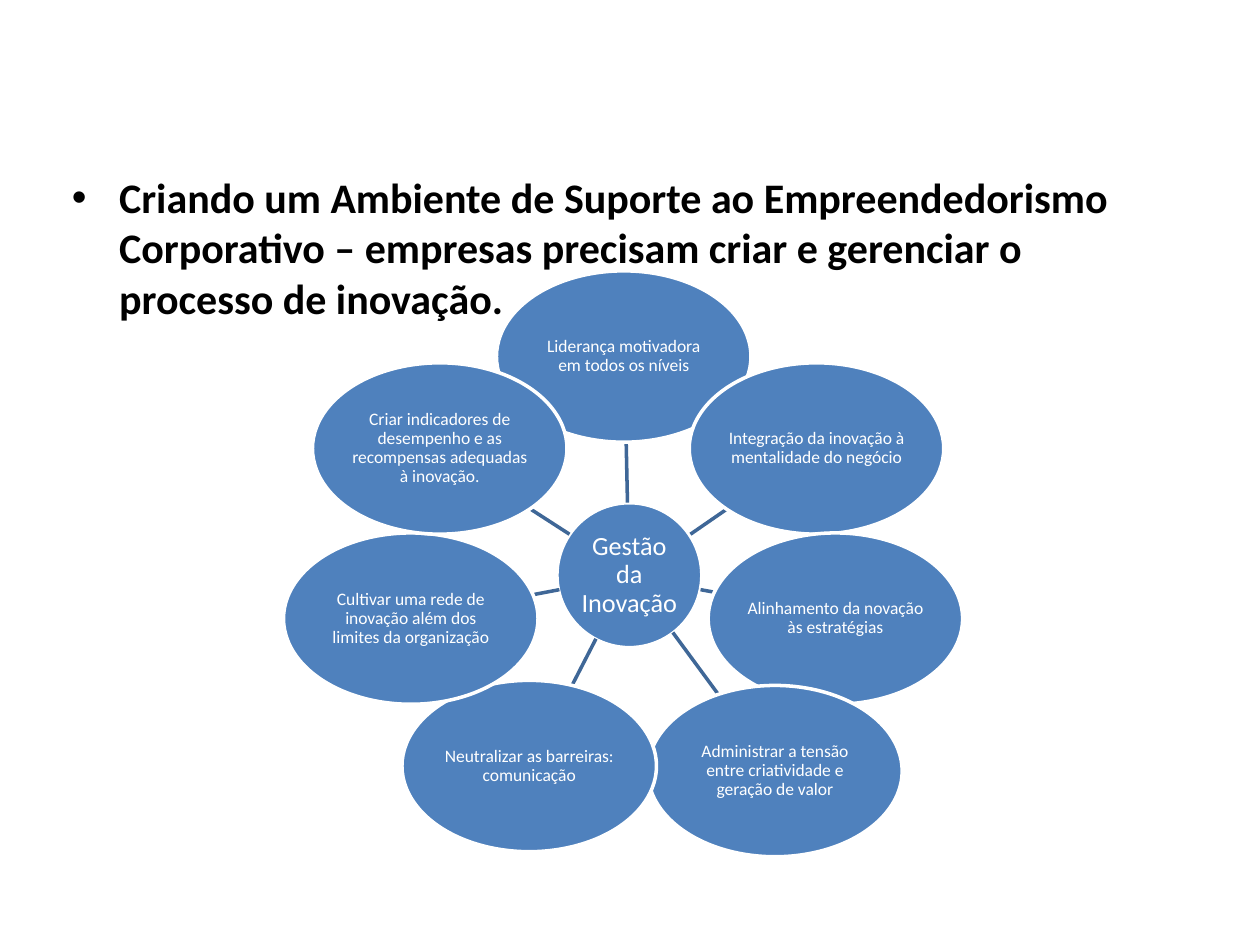
from dataclasses import dataclass

from lxml.etree import SubElement
from pptx import Presentation
from pptx.dml.color import RGBColor
from pptx.enum.shapes import MSO_CONNECTOR, MSO_SHAPE
from pptx.enum.text import MSO_ANCHOR, MSO_AUTO_SIZE, PP_ALIGN
from pptx.oxml.ns import qn
from pptx.slide import Slide
from pptx.util import Inches, Pt

BLACK = RGBColor(0x00, 0x00, 0x00)
WHITE = RGBColor(0xFF, 0xFF, 0xFF)
BLUE = RGBColor(0x4F, 0x81, 0xBD)
DARK_BLUE = RGBColor(0x3F, 0x67, 0x97)
FONT = "Calibri"
HEADING = (
    "Criando um Ambiente de Suporte ao Empreendedorismo Corporativo – "
    "empresas precisam criar e gerenciar o processo de inovação."
)


@dataclass(frozen=True)
class Bubble:
    text: str
    left: float
    top: float
    width: float = 2.02
    height: float = 1.36
    size: float = 10


@dataclass(frozen=True)
class Spoke:
    start: tuple[float, float]
    end: tuple[float, float]


HUB = Bubble("Gestão da Inovação", 4.42, 3.99, 1.15, 1.15, 15)
BRANCHES = [
    (Spoke((4.98, 3.99), (4.97, 3.51)),
     Bubble("Liderança motivadora em todos os níveis", 3.94, 2.15)),
    (Spoke((5.48, 4.24), (5.77, 4.04)),
     Bubble("Integração da inovação à mentalidade do negócio", 5.47, 2.88)),
    (Spoke((5.56, 4.68), (5.67, 4.70)),
     Bubble("Alinhamento da novação às estratégias", 5.62, 4.23)),
    (Spoke((5.34, 5.02), (5.70, 5.51)),
     Bubble("Administrar a tensão entre criatividade e geração de valor", 5.14, 5.44)),
    (Spoke((4.73, 5.07), (4.54, 5.44)),
     Bubble("Neutralizar as barreiras: comunicação", 3.19, 5.40)),
    (Spoke((4.44, 4.68), (4.23, 4.72)),
     Bubble("Cultivar uma rede de inovação além dos limites da organização", 2.25, 4.23)),
    (Spoke((4.52, 4.24), (4.21, 4.04)),
     Bubble("Criar indicadores de desempenho e as recompensas adequadas à inovação.",
            2.48, 2.88)),
]


def add_heading(page: Slide) -> None:
    title = page.shapes.title
    title.element.getparent().remove(title.element)
    body = page.placeholders[1]
    body.left, body.top = Inches(0.47), Inches(1.31)
    body.width, body.height = Inches(9), Inches(4.95)
    body.text_frame.auto_size = MSO_AUTO_SIZE.NONE
    para = body.text_frame.paragraphs[0]
    para.text = HEADING
    para.space_before = Pt(0)
    para.font.name = FONT
    para.font.size = Pt(24)
    para.font.bold = True
    para.font.color.rgb = BLACK


def add_bubble(page: Slide, bubble: Bubble) -> None:
    oval = page.shapes.add_shape(
        MSO_SHAPE.OVAL, Inches(bubble.left), Inches(bubble.top),
        Inches(bubble.width), Inches(bubble.height))
    oval.shadow.inherit = False
    oval.fill.solid()
    oval.fill.fore_color.rgb = BLUE
    oval.line.color.rgb = WHITE
    oval.line.width = Pt(2)
    frame = oval.text_frame
    frame.word_wrap = True
    frame.vertical_anchor = MSO_ANCHOR.MIDDLE
    frame.margin_left = frame.margin_right = Inches(0.01)
    frame.margin_top = frame.margin_bottom = Inches(0.01)
    para = frame.paragraphs[0]
    para.text = bubble.text
    para.alignment = PP_ALIGN.CENTER
    para.line_spacing = 0.9
    para.font.name = FONT
    para.font.size = Pt(bubble.size)
    para.font.color.rgb = WHITE


def add_spoke(page: Slide, spoke: Spoke) -> None:
    ends = [Inches(value) for value in (*spoke.start, *spoke.end)]
    line = page.shapes.add_connector(MSO_CONNECTOR.STRAIGHT, *ends)
    line.line.color.rgb = DARK_BLUE
    line.line.width = Pt(2)
    SubElement(line.element.spPr, qn("a:effectLst"))


def main() -> None:
    deck = Presentation()
    deck.slide_width, deck.slide_height = Inches(10), Inches(7.5)
    page = deck.slides.add_slide(deck.slide_layouts.get_by_name("Title and Content"))
    add_heading(page)
    add_bubble(page, HUB)
    for spoke, bubble in BRANCHES:
        add_spoke(page, spoke)
        add_bubble(page, bubble)
    deck.save("out.pptx")


if __name__ == "__main__":
    main()
